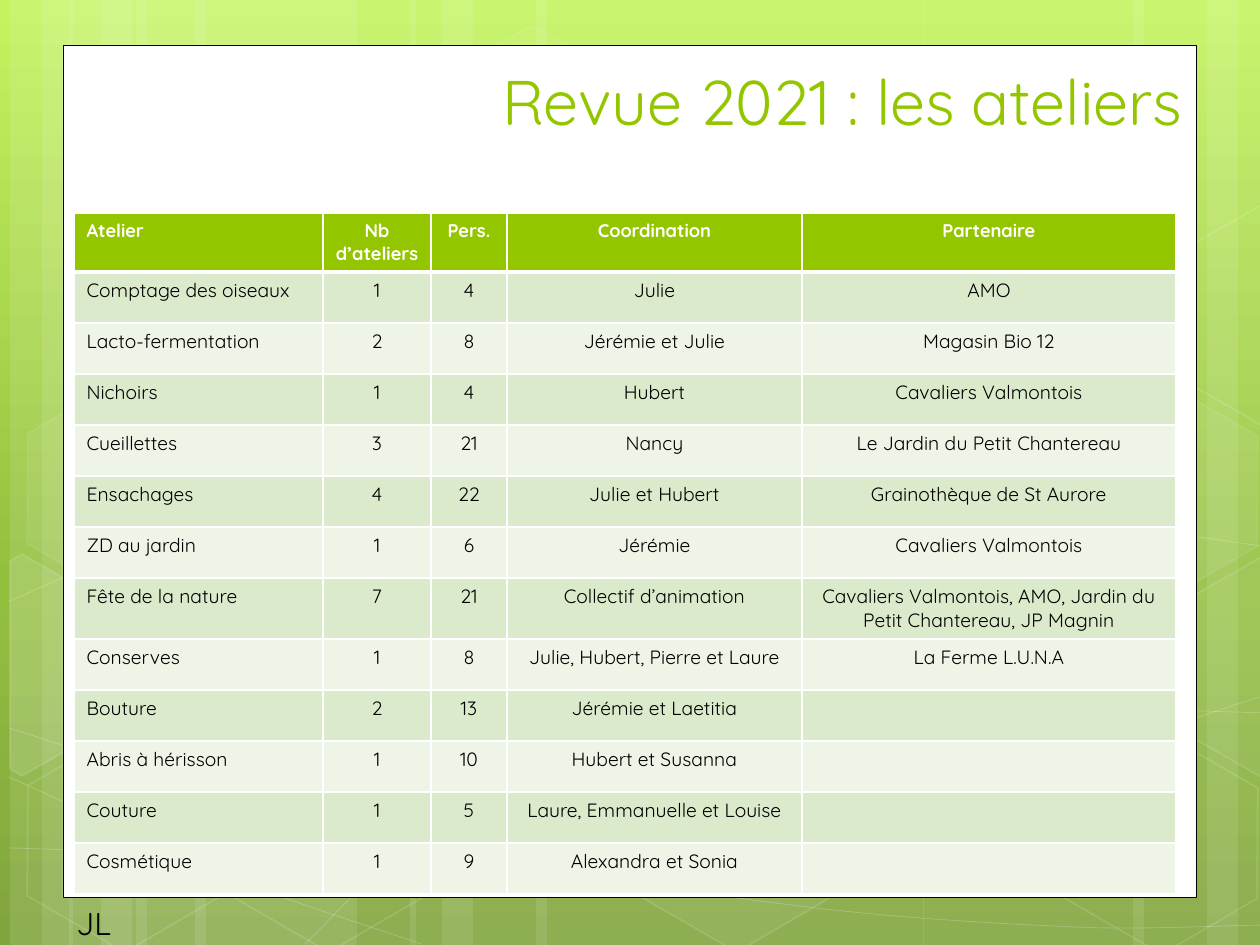
from copy import deepcopy
from itertools import product
from math import sqrt
from lxml.etree import SubElement
from pptx import Presentation
from pptx.dml.color import RGBColor
from pptx.enum.shapes import MSO_SHAPE
from pptx.enum.text import MSO_ANCHOR, PP_ALIGN
from pptx.oxml.ns import qn
from pptx.util import Pt

TITLE = "Revue 2021 : les ateliers"
INITIALS = "JL"
HEADER = ("Atelier", "Nb\nd’ateliers", "Pers.", "Coordination", "Partenaire")
WORKSHOPS = [
    ("Comptage des oiseaux", 1, 4, "Julie", "AMO"),
    ("Lacto-fermentation", 2, 8, "Jérémie et Julie", "Magasin Bio 12"),
    ("Nichoirs", 1, 4, "Hubert", "Cavaliers Valmontois"),
    ("Cueillettes", 3, 21, "Nancy", "Le Jardin du Petit Chantereau"),
    ("Ensachages", 4, 22, "Julie et Hubert", "Grainothèque de St Aurore"),
    ("ZD au jardin", 1, 6, "Jérémie", "Cavaliers Valmontois"),
    ("Fête de la nature", 7, 21, "Collectif d’animation",
     "Cavaliers Valmontois, AMO, Jardin du Petit Chantereau, JP Magnin"),
    ("Conserves", 1, 8, "Julie, Hubert, Pierre et Laure", "La Ferme L.U.N.A"),
    ("Bouture", 2, 13, "Jérémie et Laetitia", ""),
    ("Abris à hérisson", 1, 10, "Hubert et Susanna", ""),
    ("Couture", 1, 5, "Laure, Emmanuelle et Louise", ""),
    ("Cosmétique", 1, 9, "Alexandra et Sonia", ""),
]

PX = 914400 / 126
SLIDE_W, SLIDE_H = 1260, 945
FONT = "Quicksand"
COLORS = {"green": "94C600", "white": "FFFFFF", "black": "000000",
          "odd": "DCEACC", "even": "EEF5E7",
          "sky": "C3F35F", "meadow": "93BF3F", "ground": "81A53E"}
GRADIENT = {"sky": 0, "meadow": 0.62, "ground": 1}

CARD = (63, 45, 1134, 853)
TITLE_BOX = (253, 55, 942, 89)
INITIALS_BOX = (64, 898, 105, 50)
TABLE_LEFT, TABLE_TOP = 74, 213
COL_WIDTHS = (249, 108, 76, 295, 374)
HEADER_HEIGHT, ROW_HEIGHT, TWO_LINE_HEIGHT = 59, 51, 61
MAX_LINE_CHARS = 40

NARROW, MEDIUM, WIDE, EXTRA_WIDE = 63, 105, 221, 388
MEDIUM_OFFSET, WIDE_OFFSET = 32, 126
STRIPE_TRIOS = [(10, 1, WIDE), (69, 1, WIDE), (1270, -1, WIDE), (410, 1, EXTRA_WIDE)]

WAVE_KNOTS = {
    "rising": [(9, 848), (239, 854), (577, 838), (998, 777), (1269, 694)],
    "arch": [(9, 601), (152, 543), (437, 488), (824, 488), (1269, 547)],
    "corner": [(9, 777), (230, 877), (421, 944)],
    "falling": [(9, 728), (161, 776), (450, 848), (791, 905), (1075, 927), (1269, 925)],
    "fan": [(305, 944), (381, 871), (489, 805), (592, 767), (766, 728), (1000, 708),
            (1268, 713)],
}

HEX_RADIUS = 111
HEX_HALF_WIDTH = round(HEX_RADIUS * sqrt(3) / 2)
HALF_STEP, ROW_STEP = 102, 176
EDGES = (10, 1271)
HEX_CLUSTERS = [
    {"center": (124, 841),
     "cells": [(4, 4, 4, 8), (6, 0, 6, 12), (-1, 1, 10, 12), (0, 0, 0, 12),
               (0, 2, 7, 8), (2, 0, 0, 12)]},
    {"center": (1161, 843),
     "cells": [(-1, 1, 10, 12), (0, 0, 0, 12), (0, 2, 7, 8), (1, 1, 4, 12),
               (1, 3, 0, 12)]},
]


def emu(*lengths):
    return [round(n * PX) for n in lengths]


def rgb(name):
    return RGBColor.from_string(COLORS[name])


def paint(fill, color, alpha=100):
    if not alpha:
        fill.background()
        return
    fill.solid()
    fill.fore_color.rgb = rgb(color)
    if alpha < 100:
        clr = fill._xPr.find(qn("a:solidFill"))[0]
        SubElement(clr, qn("a:alpha"), val=str(alpha * 1000))


def style(sp, alpha=100, line="white", width=1, line_alpha=100):
    sp.shadow.inherit = False
    paint(sp.fill, "white", alpha)
    paint(sp.line.fill, line, line_alpha)
    if line_alpha:
        sp.line.width = Pt(width)


def write(tf, text, size, color="black", bold=False, align=PP_ALIGN.LEFT):
    tf.word_wrap = True
    for i, part in enumerate(text.split("\n")):
        p = tf.add_paragraph() if i else tf.paragraphs[0]
        p.alignment = align
        r = p.add_run()
        r.text = part
        r.font.name, r.font.size, r.font.bold = FONT, Pt(size), bold
        r.font.color.rgb = rgb(color)


def outline(s, points, close):
    fb = s.shapes.build_freeform(*points[0], scale=PX)
    fb.add_line_segments(points[1:], close=close)
    return fb.convert_to_shape()


def draw_gradient(s):
    fill = s.background.fill
    fill.gradient()
    fill.gradient_angle = 270
    stops = s._element.find(".//" + qn("a:gsLst"))
    stops.insert(1, deepcopy(stops[0]))
    for stop, (color, position) in zip(fill.gradient_stops, GRADIENT.items()):
        stop.position = position
        stop.color.rgb = rgb(color)


def draw_stripe_trio(s, start, direction, wide):
    trio = ((WIDE_OFFSET, wide), (0, NARROW), (MEDIUM_OFFSET, MEDIUM))
    for offset, width in trio:
        near = start + direction * offset
        left = min(near, near + direction * width)
        sp = s.shapes.add_shape(MSO_SHAPE.RECTANGLE, *emu(left, 0, width, SLIDE_H))
        style(sp, alpha=10, line_alpha=0)


def slope(a, b):
    return (b[1] - a[1]) / (b[0] - a[0])


def bezier_points(knots):
    last = len(knots) - 1
    slopes = [slope(knots[max(i - 1, 0)], knots[min(i + 1, last)])
              for i in range(last + 1)]
    points = [knots[0]]
    for i in range(last):
        (x0, y0), (x1, y1) = knots[i:i + 2]
        third = (x1 - x0) / 3
        points += [(x0 + third, y0 + third * slopes[i]),
                   (x1 - third, y1 - third * slopes[i + 1]), (x1, y1)]
    return points


def draw_wave(s, knots):
    sp = outline(s, bezier_points(knots), close=False)
    geometry = sp._element.find(".//" + qn("a:path"))
    lines = geometry.findall(qn("a:lnTo"))
    for i in range(0, len(lines), 3):
        bezier = SubElement(geometry, qn("a:cubicBezTo"))
        for line in lines[i:i + 3]:
            bezier.append(line[0])
            geometry.remove(line)
    style(sp, alpha=0, width=0.5, line_alpha=20)


def full_hexagon(s, cx, cy):
    box = (cx - HEX_RADIUS, cy - HEX_HALF_WIDTH, 2 * HEX_RADIUS, 2 * HEX_HALF_WIDTH)
    sp = s.shapes.add_shape(MSO_SHAPE.HEXAGON, *emu(*box))
    sp.adjustments[0] = 0.285
    sp.rotation = 30
    return sp


def cut_hexagon(s, cx, cy, left, right):
    half = [(x, HEX_RADIUS - abs(x - cx) / sqrt(3)) for x in (left, cx, right)]
    upper = [(x, cy - rise) for x, rise in half]
    lower = [(x, cy + rise) for x, rise in reversed(half)]
    return outline(s, upper + lower, close=True)


def draw_hexagons(s, center, cells):
    for half_steps, rows_up, alpha, line_alpha in cells:
        cx = center[0] + half_steps * HALF_STEP
        cy = center[1] - rows_up * ROW_STEP
        left = max(cx - HEX_HALF_WIDTH, EDGES[0])
        right = min(cx + HEX_HALF_WIDTH, EDGES[1])
        if right - left < 2 * HEX_HALF_WIDTH:
            sp = cut_hexagon(s, cx, cy, left, right)
        else:
            sp = full_hexagon(s, cx, cy)
        style(sp, alpha=alpha, line_alpha=line_alpha)


def border(cell, side, width):
    ln = SubElement(cell._tc.get_or_add_tcPr(), qn("a:" + side), w=str(Pt(width)))
    SubElement(SubElement(ln, qn("a:solidFill")), qn("a:srgbClr"), val=COLORS["white"])


def draw_table(s):
    rows = [HEADER] + WORKSHOPS
    heights = [HEADER_HEIGHT] + [
        TWO_LINE_HEIGHT if len(partner) > MAX_LINE_CHARS else ROW_HEIGHT
        for *_, partner in WORKSHOPS]
    box = emu(TABLE_LEFT, TABLE_TOP, sum(COL_WIDTHS), sum(heights))
    table = s.shapes.add_table(len(rows), len(HEADER), *box).table
    table.horz_banding = False
    for col, width in zip(table.columns, emu(*COL_WIDTHS)):
        col.width = width
    for row, height in zip(table.rows, emu(*heights)):
        row.height = height
    for i, j in product(range(len(rows)), range(len(HEADER))):
        cell, head, text = table.cell(i, j), i == 0, str(rows[i][j])
        for side in ("lnL", "lnR", "lnT", "lnB"):
            under_header = (i, side) in ((0, "lnB"), (1, "lnT"))
            border(cell, side, 3 if under_header else 1)
        paint(cell.fill, "green" if head else "odd" if i % 2 else "even")
        if text:
            write(cell.text_frame, text, 10.5 if head else 11,
                  color="white" if head else "black", bold=head,
                  align=PP_ALIGN.CENTER if j else PP_ALIGN.LEFT)


def main():
    prs = Presentation()
    prs.slide_width, prs.slide_height = emu(SLIDE_W, SLIDE_H)
    s = prs.slides.add_slide(prs.slide_layouts[6])
    draw_gradient(s)
    for trio in STRIPE_TRIOS:
        draw_stripe_trio(s, *trio)
    for knots in WAVE_KNOTS.values():
        draw_wave(s, knots)
    for cluster in HEX_CLUSTERS:
        draw_hexagons(s, **cluster)
    card = s.shapes.add_shape(MSO_SHAPE.RECTANGLE, *emu(*CARD))
    style(card, line="black", width=0.5)
    title = s.shapes.add_textbox(*emu(*TITLE_BOX)).text_frame
    title.vertical_anchor = MSO_ANCHOR.BOTTOM
    write(title, TITLE, 36, color="green", align=PP_ALIGN.RIGHT)
    draw_table(s)
    write(s.shapes.add_textbox(*emu(*INITIALS_BOX)).text_frame, INITIALS, 18)
    prs.save("out.pptx")


if __name__ == "__main__":
    main()
